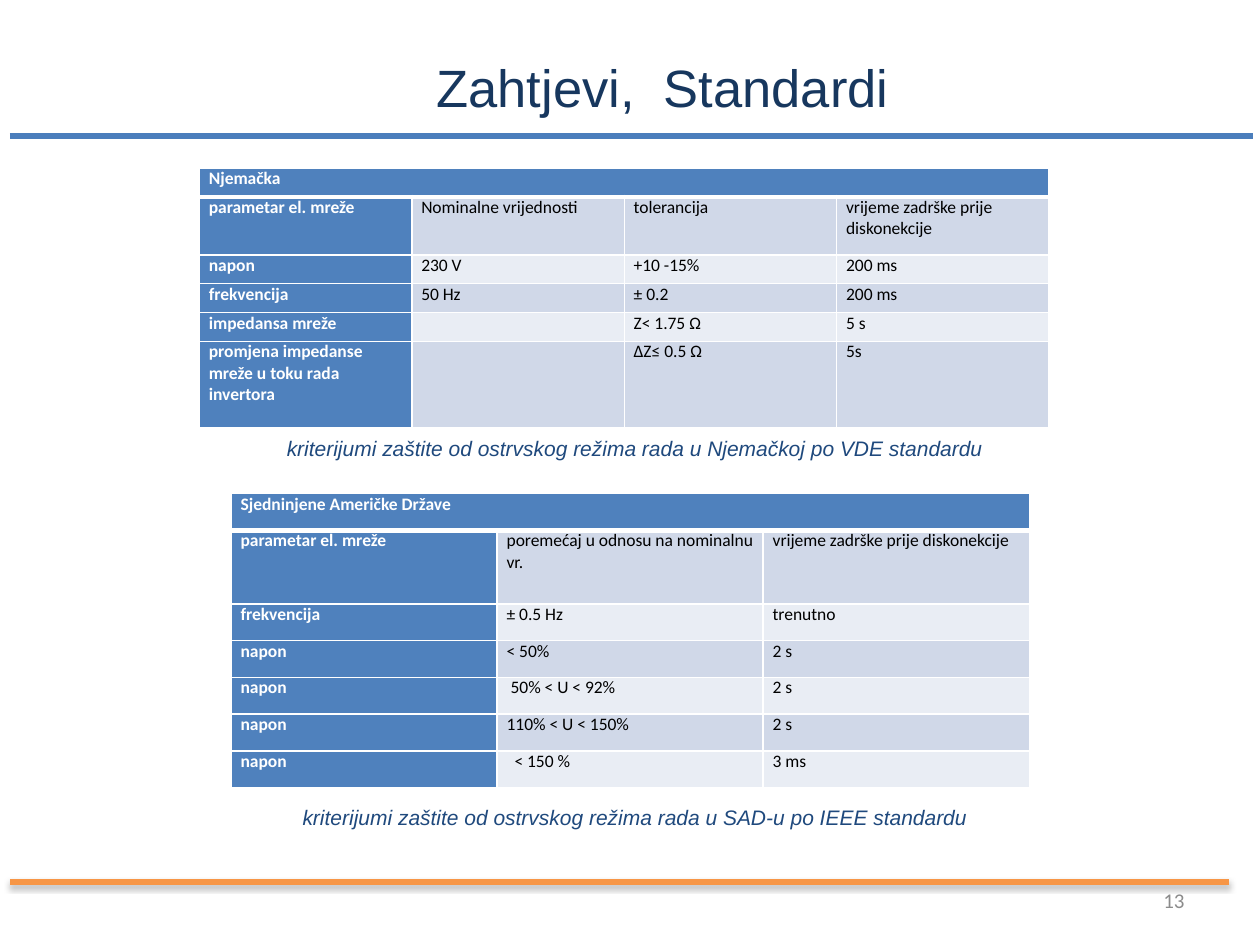
from lxml.etree import SubElement
from pptx import Presentation
from pptx.dml.color import RGBColor
from pptx.enum.shapes import MSO_CONNECTOR
from pptx.enum.text import MSO_ANCHOR, PP_ALIGN
from pptx.oxml.ns import qn
from pptx.util import Cm, Pt

WHITE = RGBColor(0xFF, 0xFF, 0xFF)
BLACK = RGBColor(0x00, 0x00, 0x00)
TITLE_NAVY = RGBColor(0x17, 0x37, 0x5E)
CAPTION_BLUE = RGBColor(0x1F, 0x49, 0x7D)
RULE_BLUE = RGBColor(0x4B, 0x7E, 0xBC)
RULE_ORANGE = RGBColor(0xF7, 0x96, 0x46)
HEADER_BLUE = RGBColor(0x4F, 0x81, 0xBD)
BAND_DARK = RGBColor(0xD0, 0xD8, 0xE8)
BAND_LIGHT = RGBColor(0xE9, 0xED, 0xF4)
NUMBER_GREY = RGBColor(0x8C, 0x8C, 0x8C)

CELL_MARGIN = 0.19
SPACE_WIDTH = 0.08

GERMANY = [
    ["Njemačka"],
    ["parametar el. mreže", "Nominalne vrijednosti", "tolerancija",
     "vrijeme zadrške prije diskonekcije"],
    ["napon", "230 V", "+10 -15%", "200 ms"],
    ["frekvencija", "50 Hz", "± 0.2", "200 ms"],
    ["impedansa mreže", "", "Z< 1.75 Ω", "5 s"],
    ["promjena impedanse mreže u toku rada invertora", "", "∆Z≤ 0.5 Ω", "5s"],
]
USA = [
    ["Sjedninjene Američke Države"],
    ["parametar el. mreže", "poremećaj u odnosu na nominalnu vr.",
     "vrijeme zadrške prije diskonekcije"],
    ["frekvencija", "± 0.5 Hz", "trenutno"],
    ["napon", "< 50%", "2 s"],
    ["napon", "50% < U < 92%", "2 s"],
    ["napon", "110% < U < 150%", "2 s"],
    ["napon", "< 150 %", "3 ms"],
]


def format_text(shape, text, size, color, font_name, align, italic=False):
    frame = shape.text_frame
    frame.text = text
    paragraph = frame.paragraphs[0]
    paragraph.alignment = align
    font = paragraph.runs[0].font
    font.name, font.size, font.italic = font_name, Pt(size), italic
    font.color.rgb = color
    return frame


def add_text(slide, box, *style, **options):
    shape = slide.shapes.add_textbox(*map(Cm, box))
    frame = format_text(shape, *style, **options)
    frame.word_wrap = True
    return frame


def add_title(slide, box, text):
    title = slide.shapes.title
    title.left, title.top, title.width, title.height = map(Cm, box)
    frame = format_text(title, text, 30, TITLE_NAVY, "Arial", PP_ALIGN.CENTER)
    frame.word_wrap = False
    frame.vertical_anchor = MSO_ANCHOR.TOP


def add_rule(slide, left, right, top, color, shadow=False):
    rule = slide.shapes.add_connector(
        MSO_CONNECTOR.STRAIGHT, Cm(left), Cm(top), Cm(right), Cm(top))
    rule.line.color.rgb = color
    rule.line.width = Pt(3)
    effects = SubElement(rule._element.spPr, qn("a:effectLst"))
    if shadow:
        outer = SubElement(effects, qn("a:outerShdw"), blurRad="40000",
                           dist="23000", dir="5400000", rotWithShape="0")
        black = SubElement(outer, qn("a:srgbClr"), val="000000")
        SubElement(black, qn("a:alpha"), val="35000")


def set_borders(cell, bottom_width):
    properties = cell._tc.get_or_add_tcPr()
    for index, side in enumerate(("lnL", "lnR", "lnT", "lnB")):
        width = bottom_width if side == "lnB" else 1
        line = properties.makeelement(qn(f"a:{side}"), {"w": str(Pt(width))})
        fill = SubElement(line, qn("a:solidFill"))
        SubElement(fill, qn("a:srgbClr"), val=str(WHITE))
        properties.insert(index, line)


def format_cell(cell, text, fill, is_header, bottom_width, indent):
    cell.fill.solid()
    cell.fill.fore_color.rgb = fill
    cell.margin_left = Cm(CELL_MARGIN + indent)
    cell.margin_right = Cm(CELL_MARGIN)
    cell.margin_top = cell.margin_bottom = 0
    set_borders(cell, bottom_width)
    cell.text = text
    paragraph = cell.text_frame.paragraphs[0]
    for run in paragraph.runs:
        run.font.name, run.font.size, run.font.bold = "Calibri", Pt(10), is_header
        run.font.color.rgb = WHITE if is_header else BLACK
    if not text:
        # Keeps an empty cell from stretching its row
        SubElement(paragraph._p, qn("a:endParaRPr"), sz="1000")


def add_criteria_table(slide, box, rows, row_units, indents=None):
    """Row heights share the box in proportion to row_units."""
    left, top, width, height = box
    column_count = len(rows[1])
    table = slide.shapes.add_table(len(rows), column_count, *map(Cm, box)).table
    for column in table.columns:
        column.width = Cm(width / column_count)
    for row, units in zip(table.rows, row_units):
        row.height = Cm(height * units / sum(row_units))
    table.cell(0, 0).merge(table.cell(0, column_count - 1))
    for row_index, texts in enumerate(rows):
        band = BAND_DARK if row_index % 2 else BAND_LIGHT
        for column_index in range(column_count):
            is_header = row_index == 0 or column_index == 0
            text = texts[column_index] if column_index < len(texts) else ""
            format_cell(table.cell(row_index, column_index), text,
                        HEADER_BLUE if is_header else band, is_header,
                        3 if row_index == 0 else 1,
                        (indents or {}).get((row_index, column_index), 0))


def add_caption(slide, top, text):
    add_text(slide, (4.45, top, 16.71, 0.77), text, 12, CAPTION_BLUE, "Arial",
             PP_ALIGN.CENTER, italic=True)


def main():
    presentation = Presentation()
    presentation.slide_width, presentation.slide_height = Cm(25.4), Cm(19.05)
    slide = presentation.slides.add_slide(presentation.slide_layouts[5])

    # Heading and footer
    add_rule(slide, 0.2, 25.25, 2.74, RULE_BLUE)
    add_rule(slide, 0.2, 24.77, 17.78, RULE_ORANGE, shadow=True)
    add_title(slide, (8.51, 0.99, 9.7, 1.54), "Zahtjevi,  Standardi")
    number = add_text(slide, (18.2, 17.65, 5.93, 1.01), "13", 12, NUMBER_GREY,
                      "Calibri", PP_ALIGN.RIGHT)
    number.vertical_anchor = MSO_ANCHOR.MIDDLE

    # German criteria
    add_criteria_table(slide, (4.02, 3.39, 17.13, 5.24), GERMANY,
                       [1, 2, 1, 1, 1, 3])
    add_caption(slide, 8.66, "kriterijumi zaštite od ostrvskog režima rada "
                             "u Njemačkoj po VDE standardu")

    # American criteria
    add_criteria_table(slide, (4.66, 9.95, 16.09, 5.93), USA,
                       [1, 2, 1, 1, 1, 1, 1],
                       {(4, 1): SPACE_WIDTH, (6, 1): 2 * SPACE_WIDTH})
    add_caption(slide, 16.09, "kriterijumi zaštite od ostrvskog režima rada "
                              "u SAD-u po IEEE standardu")

    presentation.save("out.pptx")


if __name__ == "__main__":
    main()
